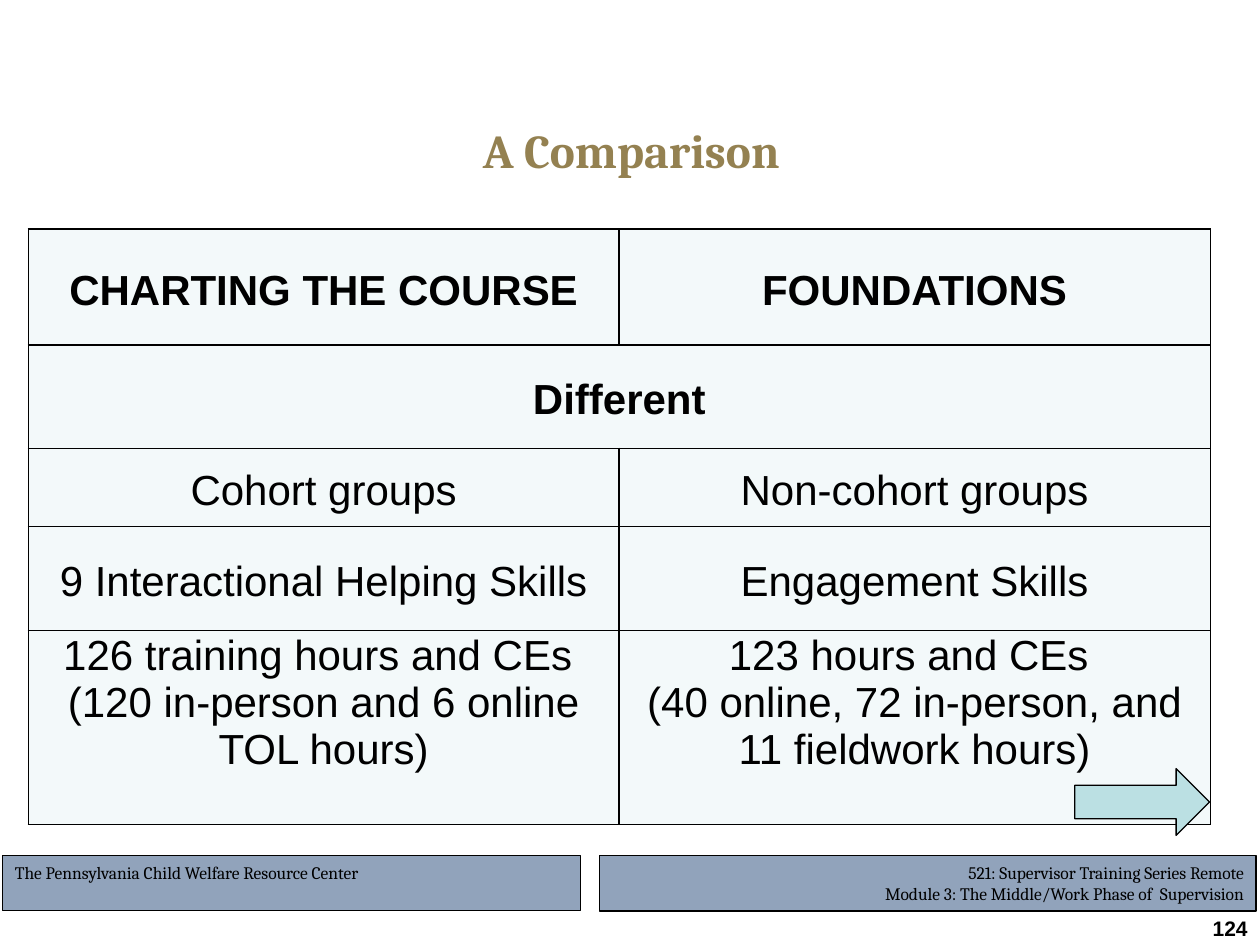
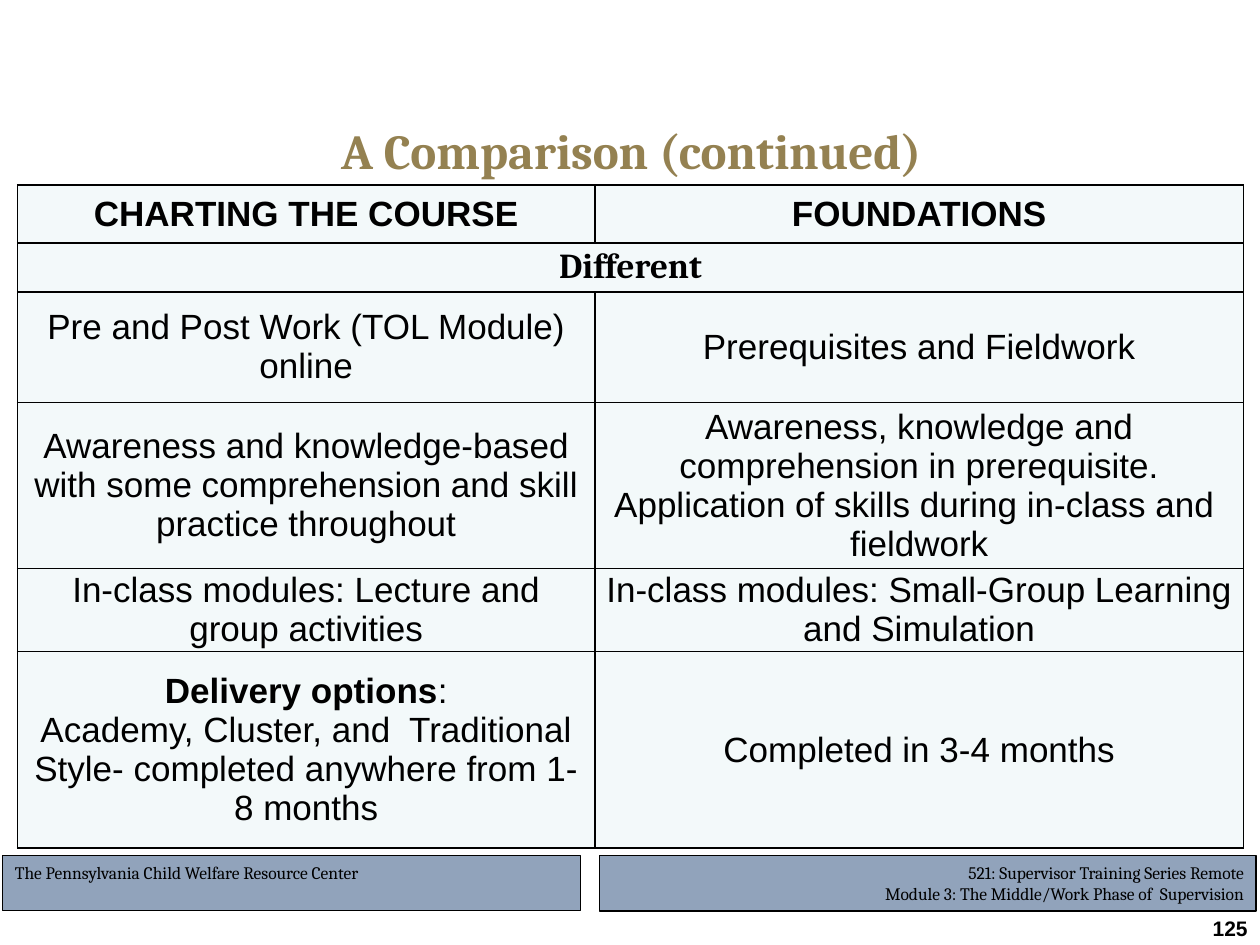
from lxml.etree import SubElement
from pptx import Presentation
from pptx.dml.color import RGBColor
from pptx.enum.shapes import MSO_SHAPE
from pptx.enum.text import MSO_ANCHOR, PP_ALIGN
from pptx.oxml import parse_xml
from pptx.oxml.ns import nsdecls, qn
from pptx.util import Pt

# Content: a cell is a list of paragraphs, a paragraph a list of (text, bold) runs or plain text
HEADS = ["CHARTING THE COURSE", "FOUNDATIONS"]
SLIDES = [
    dict(
        title="A Comparison", title_size=27, number="124", arrow=True,
        at=(16.2, 131), cols=(337.4, 338), rows=(66.2, 59, 44.6, 59.4, 111),
        size=24, spacing=1.15, band_font="Arial", last_pad=28,
        pairs=[
            (["Cohort groups"], ["Non-cohort groups"]),
            (["9 Interactional Helping Skills"], ["Engagement Skills"]),
            (["126 training hours and CEs ",
              "(120 in-person and 6 online TOL hours)"],
             ["123 hours and CEs ",
              "(40 online, 72 in-person, and 11 fieldwork hours)"]),
        ],
    ),
    dict(
        title="A Comparison (continued)", title_size=28, number="125", arrow=False,
        at=(10.1, 105.8), cols=(329.8, 370.8),
        rows=(33.1, 28.1, 63, 95, 47.5, 112.3),
        size=20, spacing=1.0, band_font="Cambria", last_pad=0,
        pairs=[
            (["Pre and Post Work (TOL Module) online"],
             ["Prerequisites and Fieldwork"]),
            (["Awareness and knowledge-based with some comprehension "
              "and skill practice throughout"],
             ["Awareness, knowledge and comprehension in prerequisite. "
              "Application of skills during in-class and ",
              "fieldwork"]),
            (["In-class modules: Lecture and group activities"],
             ["In-class modules: Small-Group Learning and Simulation"]),
            ([[("Delivery options", True), (":", False)],
              "Academy, Cluster, and  Traditional Style- completed "
              "anywhere from 1-8 months"],
             ["Completed in 3-4 months"]),
        ],
    ),
]
BAND = "Different"

# Shared look: footer bands are (left, width, line width, alignment, lines)
COLORS = dict(title="948151", text="000000", line="000000", footer="91A3BB",
              cell="F3F9FA", arrow="BBE0E3")
FOOTER_TOP, FOOTER_HEIGHT = 488.9, 31.7
FOOTERS = [
    (342.7, 375.1, 0.75, PP_ALIGN.RIGHT,
     ["521: Supervisor Training Series Remote",
      "Module 3: The Middle/Work Phase of  Supervision"]),
    (1.4, 330.5, 0.5, PP_ALIGN.LEFT,
     ["The Pennsylvania Child Welfare Resource Center"]),
]


def color(name):
    return RGBColor.from_string(COLORS[name])


def write(tf, paras, size, font, align, bold=False, tint="text", spacing=None):
    tf.word_wrap = True
    for i, para in enumerate(paras):
        p = tf.paragraphs[0] if i == 0 else tf.add_paragraph()
        p.alignment = align
        if spacing:
            p.line_spacing = spacing
        for text, heavy in [(para, bold)] if isinstance(para, str) else para:
            r = p.add_run()
            r.text = text
            r.font.size, r.font.name, r.font.bold = Pt(size), font, heavy
            r.font.color.rgb = color(tint)


def add_block(s, kind, box, fill, width):
    sp = s.shapes.add_shape(kind, *map(Pt, box))
    sp.shadow.inherit = False
    sp.fill.solid()
    sp.fill.fore_color.rgb = color(fill)
    sp.line.color.rgb = color("line")
    sp.line.width = Pt(width)
    return sp


def add_footers(s):
    for left, width, line, align, lines in FOOTERS:
        sp = add_block(s, MSO_SHAPE.RECTANGLE,
                       (left, FOOTER_TOP, width, FOOTER_HEIGHT), "footer", line)
        sp.text_frame.vertical_anchor = MSO_ANCHOR.TOP
        write(sp.text_frame, lines, 10, "Cambria", align)


def add_title(s, text, size):
    sp = s.shapes.title
    sp.left, sp.top, sp.width, sp.height = map(Pt, (36.7, 62.3, 648, 46.8))
    sp.text_frame.vertical_anchor = MSO_ANCHOR.MIDDLE
    write(sp.text_frame, [text], size, "Cambria", PP_ALIGN.CENTER, True, "title")


def style_cell(cell):
    cell.vertical_anchor = MSO_ANCHOR.MIDDLE
    cell.margin_left = cell.margin_right = Pt(5.8)
    cell.margin_top = cell.margin_bottom = 0
    cell.fill.solid()
    cell.fill.fore_color.rgb = color("cell")
    tcPr = cell._tc.get_or_add_tcPr()
    for i, side in enumerate("LRTB"):
        ln = parse_xml(f'<a:ln{side} {nsdecls("a")} w="{Pt(1)}"/>')
        fill = SubElement(ln, qn("a:solidFill"))
        SubElement(fill, qn("a:srgbClr")).set("val", COLORS["line"])
        tcPr.insert(i, ln)


def add_comparison(s, d):
    cols, rows = d["cols"], d["rows"]
    frame = s.shapes.add_table(len(rows), len(cols), *map(
        Pt, (*d["at"], sum(cols), sum(rows))))
    table = frame.table
    for col, width in zip(table.columns, cols):
        col.width = Pt(width)
    for row, height in zip(table.rows, rows):
        row.height = Pt(height)
    for cell in table.iter_cells():
        style_cell(cell)
    table.cell(1, 0).merge(table.cell(1, 1))

    # Heading row, spanning band, then the compared pairs
    grid = [[[h] for h in HEADS], [[BAND]], *d["pairs"]]
    for i, line in enumerate(grid):
        for j, paras in enumerate(line):
            cell = table.cell(i, j)
            if i == len(grid) - 1:
                cell.margin_bottom = Pt(d["last_pad"])
            write(cell.text_frame, paras, d["size"],
                  d["band_font"] if i == 1 else "Arial", PP_ALIGN.CENTER,
                  bold=i < 2, spacing=d["spacing"] if len(paras) == 1 else 1.0)


def add_number(s, number):
    sp = s.shapes.add_textbox(*map(Pt, (582.5, 521.3, 137.5, 18.7)))
    sp.text_frame.vertical_anchor = MSO_ANCHOR.MIDDLE
    write(sp.text_frame, [number], 12, "Arial", PP_ALIGN.RIGHT, True)


def main():
    prs = Presentation()
    prs.slide_width, prs.slide_height = Pt(720), Pt(540)
    for d in SLIDES:
        s = prs.slides.add_slide(prs.slide_layouts[5])
        add_footers(s)
        add_title(s, d["title"], d["title_size"])
        add_comparison(s, d)
        add_number(s, d["number"])
        if d["arrow"]:
            add_block(s, MSO_SHAPE.RIGHT_ARROW, (614.2, 439.2, 77, 38.2),
                      "arrow", 0.75)
    prs.save("out.pptx")


if __name__ == "__main__":
    main()
